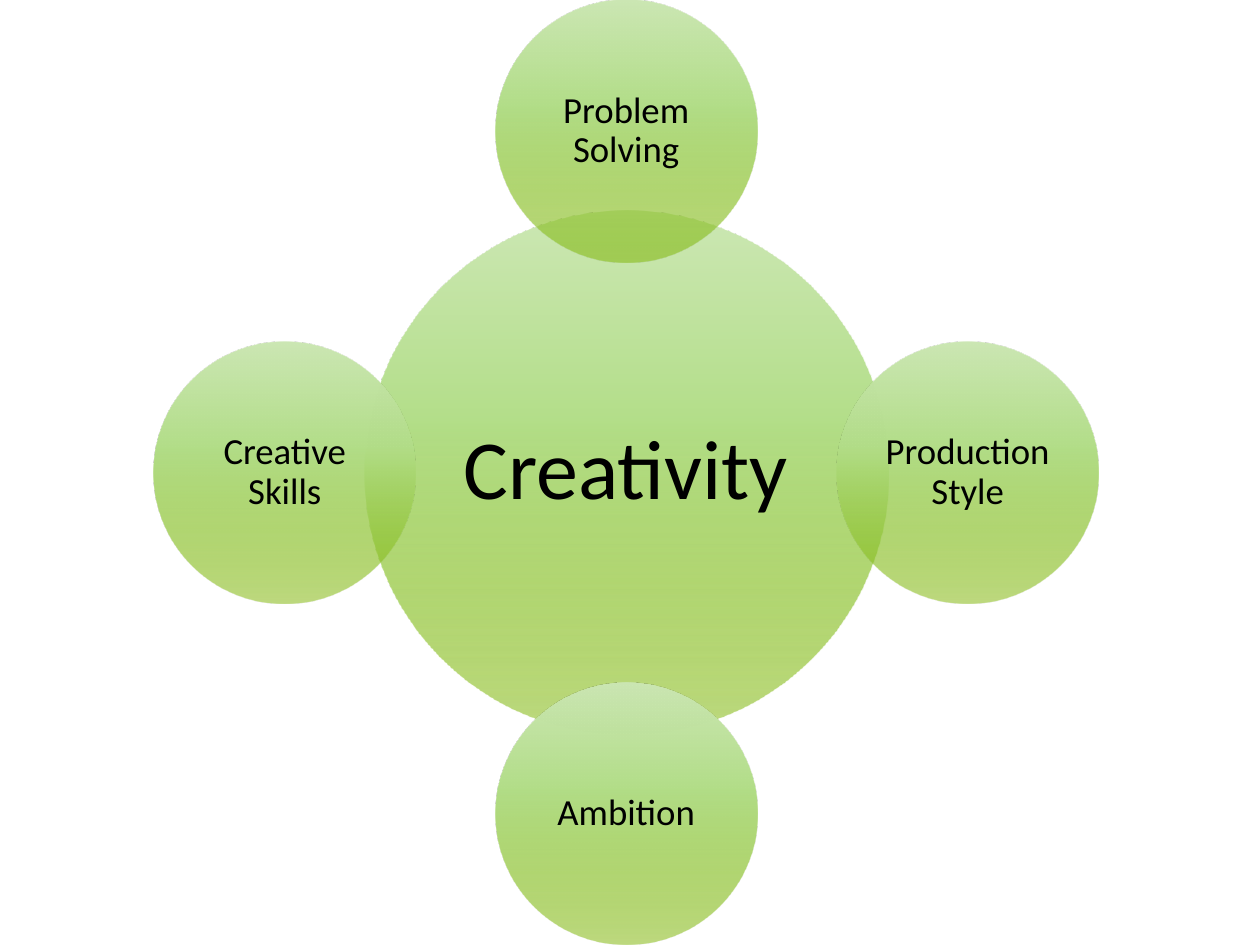
from math import cos, radians, sin

from lxml.etree import SubElement
from pptx import Presentation
from pptx.dml.color import RGBColor
from pptx.enum.shapes import MSO_SHAPE
from pptx.enum.text import MSO_ANCHOR, PP_ALIGN
from pptx.oxml.ns import qn
from pptx.util import Inches, Pt

# Content: outer circles run clockwise from the top
HUB = "Creativity"
SATELLITES = ["Problem Solving", "Production Style", "Ambition", "Creative Skills"]

# Geometry in inches
CENTER_X, CENTER_Y = 4.97, 3.75
HUB_DIAMETER, SATELLITE_DIAMETER = 4.16, 2.08
ORBIT_RADIUS = 2.71

# Style
FONT = "Calibri"
BLACK = RGBColor(0x00, 0x00, 0x00)
PALE_GREEN = RGBColor(0xCC, 0xE7, 0xB4)
LIGHT_GREEN = RGBColor(0xB3, 0xDE, 0x89)
STRONG_GREEN = RGBColor(0x7C, 0xB4, 0x00)
# Position, colour and opacity, in percent
GRADIENT = [(0, PALE_GREEN, 100), (40, LIGHT_GREEN, 100), (100, STRONG_GREEN, 50)]


def fill_with_gradient(shape):
    """Fill from top to bottom with the stops of GRADIENT."""
    shape.fill.gradient()
    shape.fill.gradient_angle = 270
    stops = shape.element.spPr.find(qn("a:gradFill")).find(qn("a:gsLst"))
    for stop in list(stops):
        stops.remove(stop)
    for position, color, opacity in GRADIENT:
        stop = SubElement(stops, qn("a:gs"), pos=str(position * 1000))
        color_element = SubElement(stop, qn("a:srgbClr"), val=str(color))
        if opacity < 100:
            SubElement(color_element, qn("a:alpha"), val=str(opacity * 1000))


def add_circle(slide, text, center_x, center_y, diameter, font_size, inset):
    left = round(center_x - diameter / 2, 2)
    top = round(center_y - diameter / 2, 2)
    circle = slide.shapes.add_shape(
        MSO_SHAPE.OVAL, Inches(left), Inches(top), Inches(diameter), Inches(diameter))
    circle.shadow.inherit = False
    circle.line.fill.background()
    fill_with_gradient(circle)

    frame = circle.text_frame
    frame.word_wrap = True
    frame.vertical_anchor = MSO_ANCHOR.MIDDLE
    frame.margin_left = frame.margin_right = Inches(inset)
    frame.margin_top = frame.margin_bottom = Inches(inset)
    paragraph = frame.paragraphs[0]
    paragraph.text = text
    paragraph.alignment = PP_ALIGN.CENTER
    paragraph.line_spacing = 0.9
    paragraph.font.name = FONT
    paragraph.font.size = Pt(font_size)
    paragraph.font.color.rgb = BLACK


def main():
    presentation = Presentation()
    presentation.slide_width = Inches(10)
    presentation.slide_height = Inches(7.5)
    slide = presentation.slides.add_slide(presentation.slide_layouts[6])

    # Central circle
    add_circle(slide, HUB, CENTER_X, CENTER_Y, HUB_DIAMETER, 48, 0.07)

    # Outer circles at equal angles
    for index, text in enumerate(SATELLITES):
        angle = radians(index * 360 / len(SATELLITES) - 90)
        add_circle(slide, text,
                   CENTER_X + ORBIT_RADIUS * cos(angle),
                   CENTER_Y + ORBIT_RADIUS * sin(angle),
                   SATELLITE_DIAMETER, 21, 0.03)

    presentation.save("out.pptx")


if __name__ == "__main__":
    main()
